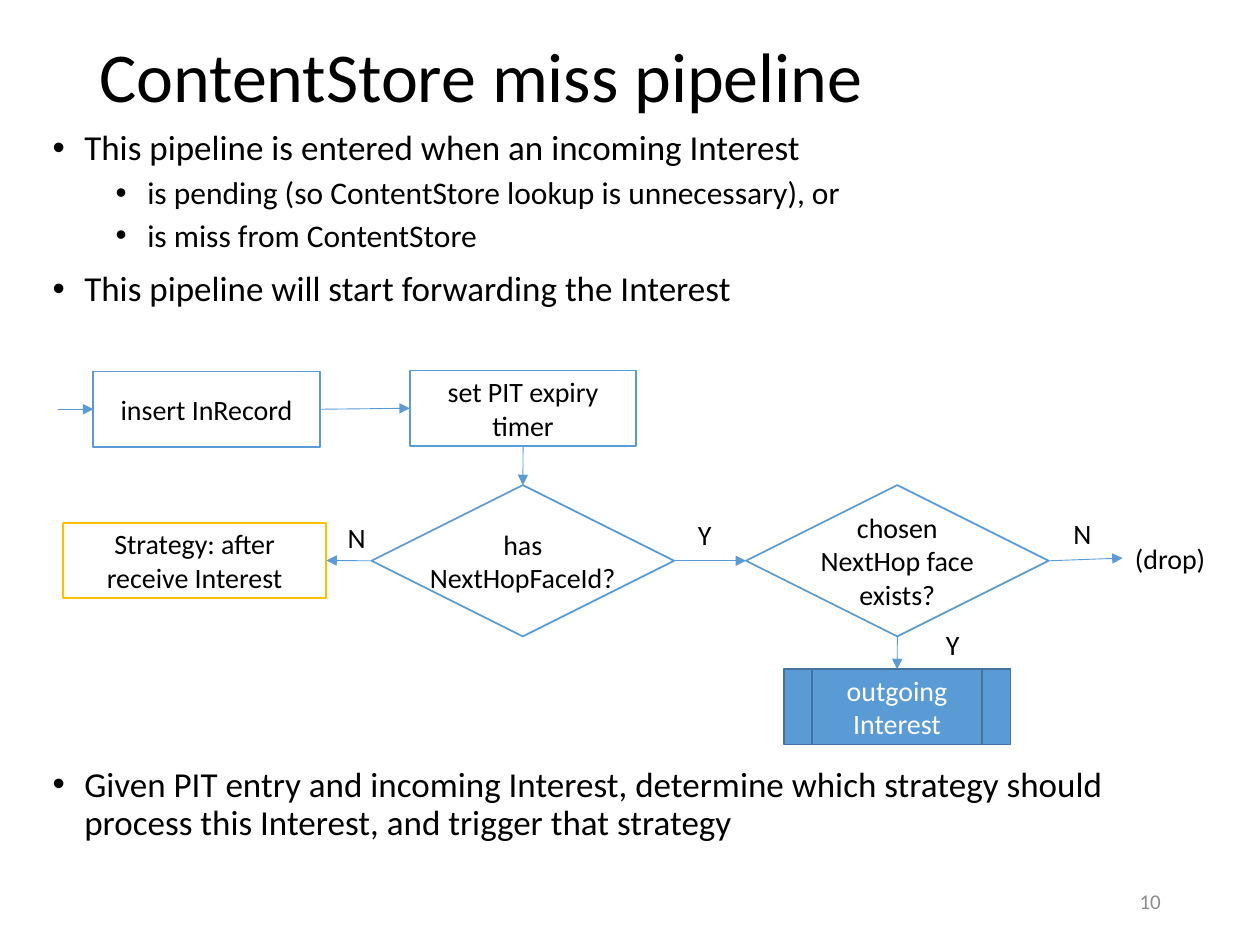
"""Build the ContentStore miss pipeline slide."""
from typing import NamedTuple, Optional

import pptx
import pptx.dml.color
import pptx.enum.shapes
import pptx.enum.text
import pptx.oxml
import pptx.oxml.ns
import pptx.util

Cm = pptx.util.Cm
Pt = pptx.util.Pt
RGBColor = pptx.dml.color.RGBColor
Kind = pptx.enum.shapes.MSO_SHAPE
Link = pptx.enum.shapes.MSO_CONNECTOR
Align = pptx.enum.text.PP_ALIGN
Anchor = pptx.enum.text.MSO_ANCHOR

BLACK = RGBColor(0, 0, 0)
WHITE = RGBColor(255, 255, 255)
GRAY = RGBColor(0x8C, 0x8C, 0x8C)
BLUE = RGBColor(0x5B, 0x9B, 0xD5)
NAVY = RGBColor(0x43, 0x73, 0x9E)
GOLD = RGBColor(0xFF, 0xC0, 0x00)
TOP, LEFT, BOTTOM, RIGHT = range(4)


class Node(NamedTuple):
    name: str
    text: str
    left: float
    top: float
    width: float = 4.57
    height: float = 1.52
    kind: int = Kind.RECTANGLE
    fill: RGBColor = WHITE
    line: RGBColor = BLUE
    ink: RGBColor = BLACK


class Label(NamedTuple):
    text: str
    left: float
    top: float
    width: float
    height: float = 0.94
    size: int = 16
    ink: RGBColor = BLACK
    wrap: bool = False
    align: Optional[int] = None
    anchor: int = Anchor.TOP


class Arrow(NamedTuple):
    start: Optional[str]
    out: int
    end: Optional[str]
    into: int
    free: tuple = (0, 0)


class Bullet(NamedTuple):
    text: str
    level: int = 0


NODES = [
    Node("insert", "insert InRecord", 1.88, 7.49),
    Node("timer", "set PIT expiry timer", 8.26, 7.47),
    Node("plan", "Strategy: after receive Interest", 1.27, 10.54, 5.31, line=GOLD),
    Node("has", "has\nNextHopFaceId?", 7.49, 9.78, 6.1, 3.05, Kind.FLOWCHART_DECISION),
    Node("send", "outgoing Interest", 15.8, 13.49,
         kind=Kind.FLOWCHART_PREDEFINED_PROCESS, fill=BLUE, line=NAVY, ink=WHITE),
    Node("face", "chosen\nNextHop face\nexists?", 15.04, 9.78, 6.1, 3.05,
         Kind.FLOWCHART_DECISION),
]
ARROWS = [
    Arrow("insert", RIGHT, "timer", LEFT),
    Arrow(None, RIGHT, "insert", LEFT, (1.17, 8.25)),
    Arrow("timer", BOTTOM, "has", TOP),
    Arrow("has", LEFT, "plan", RIGHT),
    Arrow("has", RIGHT, "face", LEFT),
    Arrow("face", BOTTOM, "send", TOP),
    Arrow("face", RIGHT, None, LEFT, (22.63, 11.25)),
]
LABELS = [
    Label("ContentStore miss pipeline", 1.75, 0.05, 21.9, 2.9, 40,
          wrap=True, anchor=Anchor.MIDDLE),
    Label("10", 17.93, 17.65, 5.72, 1.02, 12, GRAY, True, Align.RIGHT, Anchor.MIDDLE),
    Label("(drop)", 22.63, 10.8, 1.96),
    Label("N", 21.39, 10.29, 0.89),
    Label("Y", 18.82, 12.52, 0.79),
    Label("Y", 13.82, 10.31, 0.79),
    Label("N", 6.76, 10.36, 0.89),
]
INTRO = [
    Bullet("This pipeline is entered when an incoming Interest"),
    Bullet("is pending (so ContentStore lookup is unnecessary), or", 1),
    Bullet("is miss from ContentStore", 1),
    Bullet("This pipeline will start forwarding the Interest"),
]
GOAL = [Bullet("Given PIT entry and incoming Interest, determine which strategy "
               "should process this Interest, and trigger that strategy")]


def write(para, text: str, size: int, ink: RGBColor) -> None:
    for count, part in enumerate(text.split("\n")):
        if count:
            para.add_line_break()
        run = para.add_run()
        run.text = part
        run.font.name = "Calibri"
        run.font.size = Pt(size)
        run.font.color.rgb = ink


def draw_node(slide, node: Node):
    shape = slide.shapes.add_shape(
        node.kind, Cm(node.left), Cm(node.top), Cm(node.width), Cm(node.height))
    shape.shadow.inherit = False
    shape.fill.solid()
    shape.fill.fore_color.rgb = node.fill
    shape.line.color.rgb = node.line
    shape.line.width = Pt(1)
    frame = shape.text_frame
    frame.word_wrap = node.kind != Kind.FLOWCHART_DECISION
    frame.vertical_anchor = Anchor.MIDDLE
    para = frame.paragraphs[0]
    para.alignment = Align.CENTER
    write(para, node.text, 16, node.ink)
    return shape


def draw_arrow(slide, arrow: Arrow, boxes: dict) -> None:
    x, y = (Cm(value) for value in arrow.free)
    line = slide.shapes.add_connector(Link.STRAIGHT, x, y, x, y)
    if arrow.start:
        line.begin_connect(boxes[arrow.start], arrow.out)
    if arrow.end:
        line.end_connect(boxes[arrow.end], arrow.into)
    line.line.color.rgb = BLUE
    line.line.width = Pt(0.5)
    tip = pptx.oxml.parse_xml(
        f'<a:tailEnd {pptx.oxml.ns.nsdecls("a")} type="triangle"/>')
    line.line._get_or_add_ln().append(tip)
    line._element.spPr.append(
        pptx.oxml.parse_xml(f'<a:effectLst {pptx.oxml.ns.nsdecls("a")}/>'))


def draw_label(slide, label: Label) -> None:
    frame = slide.shapes.add_textbox(
        Cm(label.left), Cm(label.top), Cm(label.width), Cm(label.height)).text_frame
    frame.word_wrap = label.wrap
    frame.vertical_anchor = label.anchor
    para = frame.paragraphs[0]
    para.alignment = label.align
    write(para, label.text, label.size, label.ink)


def draw_list(slide, items: list[Bullet], top: float, width: float, height: float) -> None:
    frame = slide.shapes.add_textbox(Cm(0.81), Cm(top), Cm(width), Cm(height)).text_frame
    frame.word_wrap = True
    for count, item in enumerate(items):
        para = frame.add_paragraph() if count else frame.paragraphs[0]
        para.level = item.level
        para.line_spacing = 0.9
        para.space_before = Pt(5 if item.level else 10)
        props = para._p.get_or_add_pPr()
        props.set("marL", str(Cm(0.64 + 1.27 * item.level)))
        props.set("indent", str(-Cm(0.64)))
        for tag in ('buFont {} typeface="Arial"', 'buChar {} char="•"'):
            mark = tag.format(pptx.oxml.ns.nsdecls("a"))
            props.append(pptx.oxml.parse_xml(f"<a:{mark}/>"))
        write(para, item.text, 18 if item.level else 20, BLACK)


def main() -> None:
    deck = pptx.Presentation()
    deck.slide_width, deck.slide_height = Cm(25.4), Cm(19.05)
    slide = deck.slides.add_slide(deck.slide_layouts[6])
    boxes = {node.name: draw_node(slide, node) for node in NODES}
    for arrow in ARROWS:
        draw_arrow(slide, arrow, boxes)
    for label in LABELS:
        draw_label(slide, label)
    draw_list(slide, INTRO, 2.51, 23.19, 4.65)
    draw_list(slide, GOAL, 15.34, 23.37, 3.71)
    deck.save("out.pptx")


if __name__ == "__main__":
    main()
